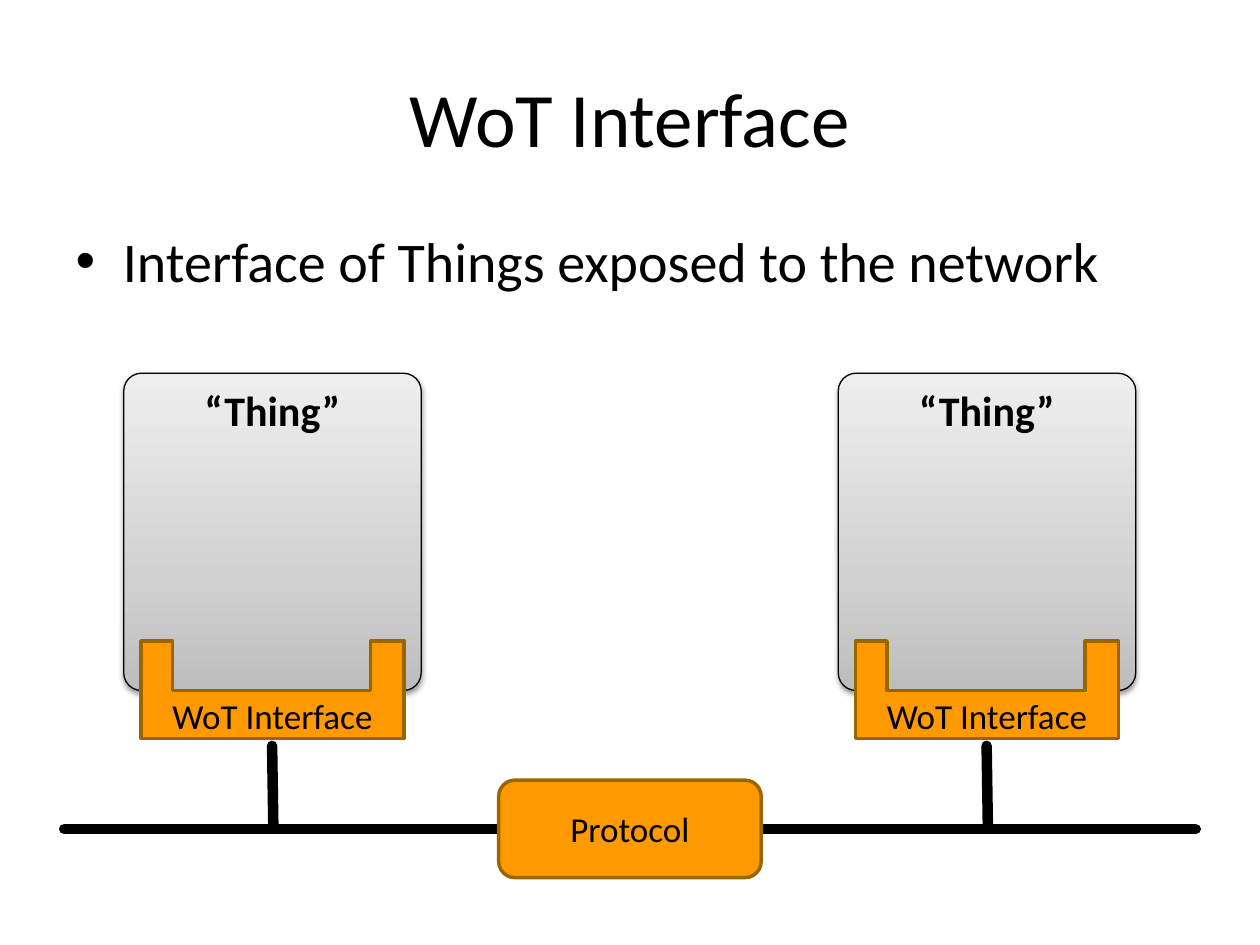
from dataclasses import dataclass

from lxml.etree import SubElement
from pptx import Presentation
from pptx.dml.color import RGBColor
from pptx.enum.shapes import MSO_CONNECTOR, MSO_SHAPE
from pptx.enum.text import MSO_ANCHOR, PP_ALIGN
from pptx.oxml.ns import qn
from pptx.util import Pt

COLORS = {
    "ink": "000000",
    "orange": "FF9900",
    "brown": "996600",
    "gray_dark": "BDBDBD",
    "gray_mid": "D1D1D1",
    "gray_light": "EEEEEE",
}
FONT = "Calibri"
THING_GRADIENT = [(0, "gray_dark"), (35, "gray_mid"), (100, "gray_light")]
THING_TOP, THING_WIDTH, THING_HEIGHT = 213.3, 170, 181.3
INTERFACE_TOP, INTERFACE_WIDTH, INTERFACE_HEIGHT = 366.3, 150.2, 55.7
NOTCH_LEFT, NOTCH_RIGHT, NOTCH_DEPTH = 18, 131.2, 28.3
BUS_Y = 473.8


@dataclass(frozen=True)
class Thing:
    left: float
    name: str
    interface: str


THINGS = [
    Thing(70.7, "“Thing”", "WoT Interface"),
    Thing(479, "“Thing”", "WoT Interface"),
]


def rgb(name: str) -> RGBColor:
    return RGBColor.from_string(COLORS[name])


def style_paragraph(para, size: float, align=None, bold=None) -> None:
    para.font.name = FONT
    para.font.size = Pt(size)
    para.font.bold = bold
    para.font.color.rgb = rgb("ink")
    para.alignment = align


def write_label(box, text: str, size: float, anchor, bold=None) -> None:
    frame = box.text_frame
    frame.text = text
    frame.vertical_anchor = anchor
    style_paragraph(frame.paragraphs[0], size, PP_ALIGN.CENTER, bold)


def set_outline(box, color: str, width: float) -> None:
    box.line.color.rgb = rgb(color)
    box.line.width = Pt(width)


def paint_orange(box) -> None:
    box.shadow.inherit = False
    box.fill.solid()
    box.fill.fore_color.rgb = rgb("orange")
    set_outline(box, "brown", 2)


def fill_gradient(box) -> None:
    box.fill.gradient()
    box.fill.gradient_angle = 90
    stops = box.element.spPr.find(".//" + qn("a:gsLst"))
    for stop in list(stops):
        stops.remove(stop)
    for position, color in THING_GRADIENT:
        stop = SubElement(stops, qn("a:gs"), pos=str(position * 1000))
        SubElement(stop, qn("a:srgbClr"), val=COLORS[color])


def add_soft_shadow(box) -> None:
    box.shadow.inherit = False
    effects = box.element.spPr.find(qn("a:effectLst"))
    shadow = SubElement(effects, qn("a:outerShdw"), blurRad=str(Pt(3.1)),
                        dist=str(Pt(1.6)), dir="5400000", rotWithShape="0")
    color = SubElement(shadow, qn("a:srgbClr"), val=COLORS["ink"])
    SubElement(color, qn("a:alpha"), val="38000")


def draw_wire(page, x1: float, y1: float, x2: float, y2: float) -> None:
    wire = page.shapes.add_connector(
        MSO_CONNECTOR.STRAIGHT, Pt(x1), Pt(y1), Pt(x2), Pt(y2))
    set_outline(wire, "ink", 6)
    wire.get_or_add_ln().set("cap", "rnd")
    SubElement(wire.element.spPr, qn("a:effectLst"))


def draw_thing(page, thing: Thing) -> None:
    box = page.shapes.add_shape(
        MSO_SHAPE.ROUNDED_RECTANGLE, Pt(thing.left), Pt(THING_TOP),
        Pt(THING_WIDTH), Pt(THING_HEIGHT))
    box.adjustments[0] = 0.06
    fill_gradient(box)
    set_outline(box, "ink", 0.75)
    add_soft_shadow(box)
    write_label(box, thing.name, 24, MSO_ANCHOR.TOP, True)
    box.text_frame.word_wrap = False

    center = thing.left + THING_WIDTH / 2
    draw_wire(page, center + 0.5, BUS_Y - 1.5, center - 0.2, 426.2)
    draw_interface(page, center - INTERFACE_WIDTH / 2, thing.interface)


def draw_interface(page, left: float, text: str) -> None:
    outline = [
        (0, 0), (NOTCH_LEFT, 0), (NOTCH_LEFT, NOTCH_DEPTH),
        (NOTCH_RIGHT, NOTCH_DEPTH), (NOTCH_RIGHT, 0), (INTERFACE_WIDTH, 0),
        (INTERFACE_WIDTH, INTERFACE_HEIGHT), (0, INTERFACE_HEIGHT),
    ]
    points = [(Pt(left + x), Pt(INTERFACE_TOP + y)) for x, y in outline]
    builder = page.shapes.build_freeform(*points[0])
    builder.add_line_segments(points[1:], close=True)
    box = builder.convert_to_shape()
    paint_orange(box)
    write_label(box, text, 20, MSO_ANCHOR.BOTTOM)
    box.text_frame.margin_top = Pt(0)
    box.text_frame.margin_bottom = Pt(1.4)


def draw_protocol(page) -> None:
    box = page.shapes.add_shape(
        MSO_SHAPE.ROUNDED_RECTANGLE, Pt(285), Pt(445.8), Pt(150), Pt(55.7))
    paint_orange(box)
    write_label(box, "Protocol", 20, MSO_ANCHOR.MIDDLE)


def fill_placeholder(box, text: str, top: float, height: float,
                     size: float, align=None) -> None:
    box.left, box.top, box.width, box.height = (
        Pt(36), Pt(top), Pt(648), Pt(height))
    box.text_frame.text = text
    style_paragraph(box.text_frame.paragraphs[0], size, align)


def main() -> None:
    deck = Presentation()
    deck.slide_width, deck.slide_height = Pt(720), Pt(540)
    page = deck.slides.add_slide(deck.slide_layouts[1])
    fill_placeholder(page.shapes.title, "WoT Interface", 21.6, 90, 44,
                     PP_ALIGN.CENTER)
    fill_placeholder(page.placeholders[1],
                     "Interface of Things exposed to the network",
                     126, 356.4, 32)
    draw_wire(page, 36.7, BUS_Y, 683.3, BUS_Y)
    for thing in THINGS:
        draw_thing(page, thing)
    draw_protocol(page)
    deck.save("out.pptx")


if __name__ == "__main__":
    main()
